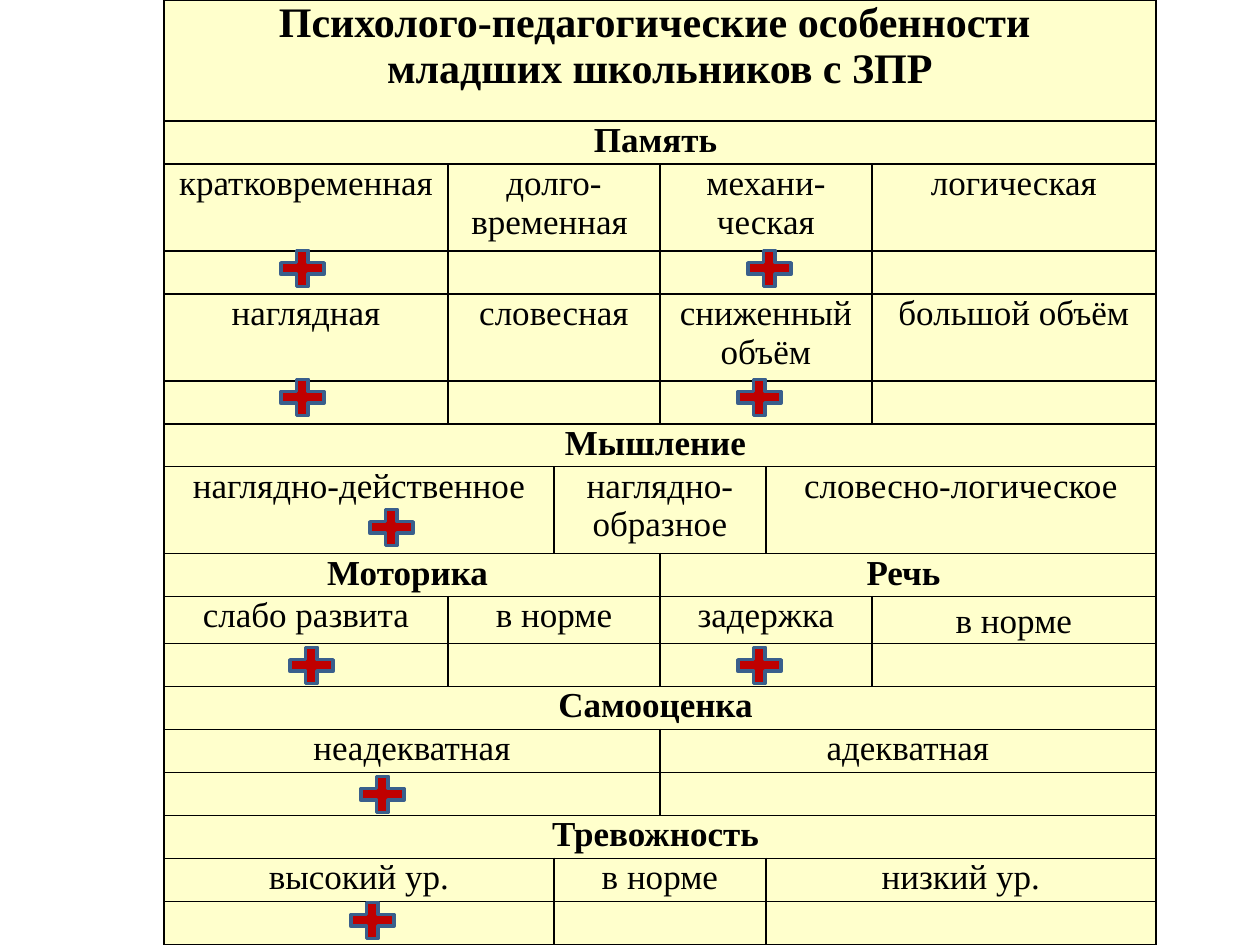
"""Build a one-slide table of psychological and pedagogical traits."""
from dataclasses import dataclass

from lxml.etree import SubElement
from pptx import Presentation
from pptx.dml.color import RGBColor
from pptx.enum.shapes import MSO_SHAPE
from pptx.enum.text import PP_ALIGN
from pptx.oxml.ns import qn
from pptx.slide import Slide
from pptx.table import Table, _Cell
from pptx.util import Emu, Pt

PIXELS_PER_INCH = 126
COLORS = {
    "cell": "FFFFCC",
    "text": "000000",
    "border": "000000",
    "plus": "C00000",
    "plus_line": "3A5F8C",
}
FONT = "Times New Roman"
TABLE_LEFT, TABLE_TOP = 164, 0
COLUMN_WIDTHS = (284, 106, 106, 106, 106, 284)
PLUS_WIDTH, PLUS_HEIGHT = 59, 49
LOW, TALL = 43, 87
WHOLE, HALVES, THIRDS, QUARTERS = (6,), (3, 3), (2, 2, 2), (1, 2, 2, 1)


@dataclass(frozen=True)
class TableRow:
    spans: tuple[int, ...]
    texts: tuple[str, ...] = ()
    height: int = LOW
    bold: bool = False
    size: int = 20
    last_spacing: float | None = None


@dataclass(frozen=True)
class PlusMark:
    left: int
    top: int


ROWS = (
    TableRow(WHOLE, ("Психолого-педагогические особенности \nмладших школьников с ЗПР",),
             height=121, bold=True, size=24),
    TableRow(WHOLE, ("Память ",), bold=True),
    TableRow(QUARTERS, ("кратковременная", "долго-временная ", "механи-ческая", "логическая"), TALL),
    TableRow(QUARTERS),
    TableRow(QUARTERS, ("наглядная", "словесная", "сниженный объём", "большой объём"), TALL),
    TableRow(QUARTERS),
    TableRow(WHOLE, ("Мышление ",), bold=True),
    TableRow(THIRDS, ("наглядно-действенное", "наглядно-образное", "словесно-логическое"), TALL),
    TableRow(HALVES, ("Моторика ", "Речь "), bold=True),
    TableRow(QUARTERS, ("слабо развита", "в норме", "задержка", "в норме"), 47, last_spacing=1.15),
    TableRow(QUARTERS),
    TableRow(WHOLE, ("Самооценка ",), bold=True),
    TableRow(HALVES, ("неадекватная", "адекватная")),
    TableRow(HALVES),
    TableRow(WHOLE, ("Тревожность ",), bold=True),
    TableRow(THIRDS, ("высокий ур.", "в норме", "низкий ур.")),
    TableRow(THIRDS),
)
PLUS_MARKS = (
    PlusMark(273, 244), PlusMark(740, 244),
    PlusMark(273, 373), PlusMark(730, 373),
    PlusMark(362, 503),
    PlusMark(282, 641), PlusMark(730, 641),
    PlusMark(353, 770),
    PlusMark(343, 896),
)


def px(value: int) -> Emu:
    return Emu(round(value * 914400 / PIXELS_PER_INCH))


def color(name: str) -> RGBColor:
    return RGBColor.from_string(COLORS[name])


def write_text(cell: _Cell, text: str, *, size: int, bold: bool, spacing: float | None) -> None:
    cell.text_frame.text = text
    for paragraph in cell.text_frame.paragraphs:
        paragraph.alignment = PP_ALIGN.CENTER
        if spacing:
            paragraph.line_spacing = spacing
        paragraph.font.size = Pt(size)
        for run in paragraph.runs:
            run.font.name = FONT
            run.font.size = Pt(size)
            run.font.bold = bold
            run.font.color.rgb = color("text")


def style_cell(cell: _Cell) -> None:
    cell.margin_left = cell.margin_right = px(6)
    cell.margin_top = cell.margin_bottom = 0
    properties = cell._tc.get_or_add_tcPr()
    for side in ("a:lnL", "a:lnR", "a:lnT", "a:lnB"):
        border = SubElement(properties, qn(side), w=str(Pt(1)))
        solid_fill = SubElement(border, qn("a:solidFill"))
        SubElement(solid_fill, qn("a:srgbClr"), val=COLORS["border"])
    cell.fill.solid()
    cell.fill.fore_color.rgb = color("cell")


def fill_row(table: Table, index: int, row: TableRow) -> None:
    table.rows[index].height = px(row.height)
    texts = row.texts or ("",) * len(row.spans)
    column = 0
    for position, (span, text) in enumerate(zip(row.spans, texts), start=1):
        cell = table.cell(index, column)
        if span > 1:
            cell.merge(table.cell(index, column + span - 1))
        spacing = row.last_spacing if position == len(row.spans) else None
        write_text(cell, text, size=row.size, bold=row.bold, spacing=spacing)
        column += span


def add_traits_table(slide: Slide) -> None:
    table = slide.shapes.add_table(
        len(ROWS), len(COLUMN_WIDTHS), px(TABLE_LEFT), px(TABLE_TOP),
        px(sum(COLUMN_WIDTHS)), px(sum(row.height for row in ROWS)),
    ).table
    table.first_row = table.horz_banding = False
    for column, width in zip(table.columns, COLUMN_WIDTHS):
        column.width = px(width)
    for cell in table.iter_cells():
        style_cell(cell)
    for index, row in enumerate(ROWS):
        fill_row(table, index, row)


def add_plus(slide: Slide, mark: PlusMark) -> None:
    shape = slide.shapes.add_shape(
        MSO_SHAPE.MATH_PLUS, px(mark.left), px(mark.top), px(PLUS_WIDTH), px(PLUS_HEIGHT))
    shape.shadow.inherit = False
    shape.fill.solid()
    shape.fill.fore_color.rgb = color("plus")
    shape.line.color.rgb = color("plus_line")
    shape.line.width = Pt(2)


def main() -> None:
    presentation = Presentation()
    presentation.slide_width, presentation.slide_height = px(1260), px(945)
    slide = presentation.slides.add_slide(presentation.slide_layouts[6])
    add_traits_table(slide)
    for mark in PLUS_MARKS:
        add_plus(slide, mark)
    presentation.save("out.pptx")


if __name__ == "__main__":
    main()
